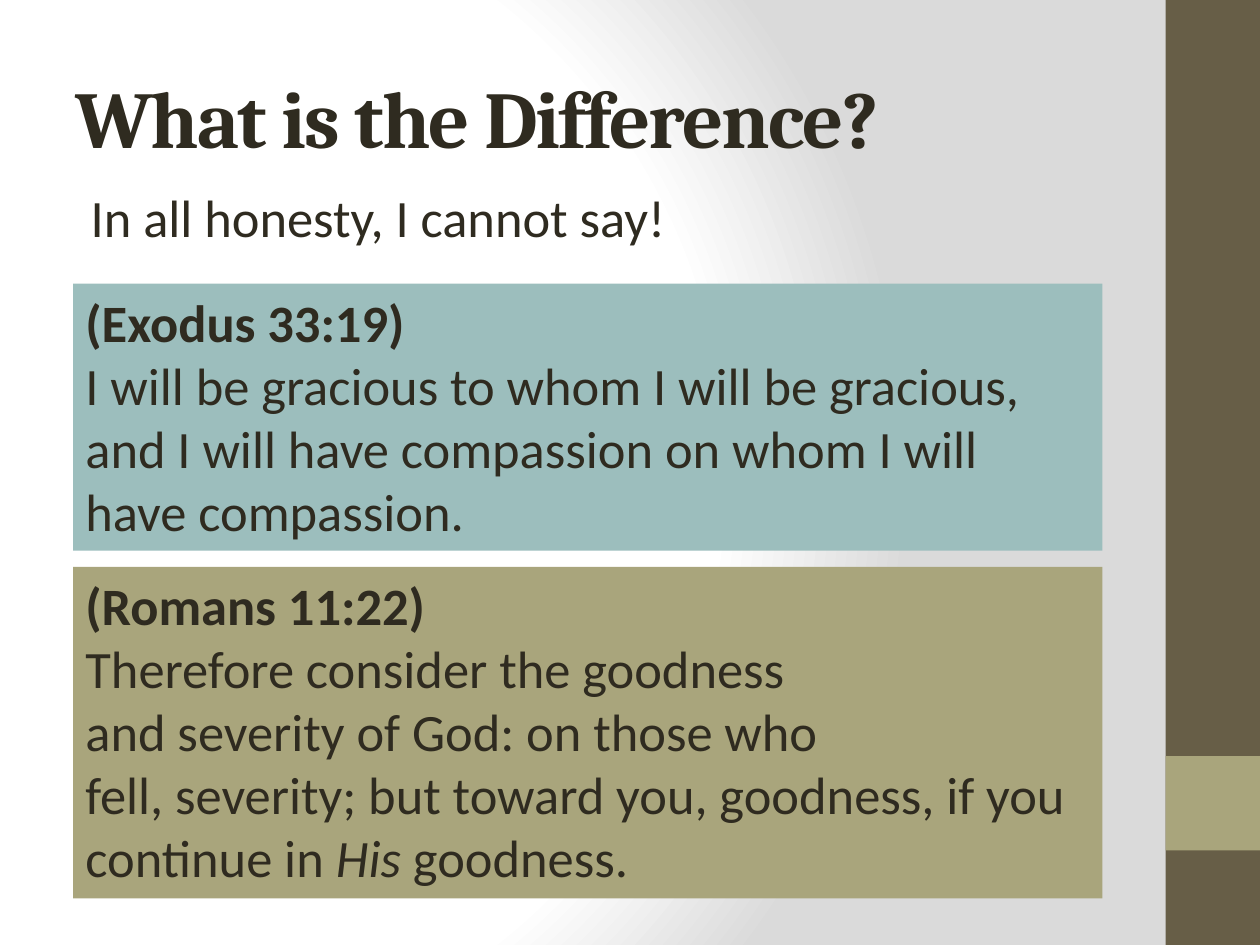
from lxml import etree
from pptx import Presentation
from pptx.dml.color import RGBColor
from pptx.enum.shapes import MSO_SHAPE
from pptx.enum.text import MSO_ANCHOR, MSO_AUTO_SIZE, PP_ALIGN
from pptx.oxml.ns import qn
from pptx.util import Inches, Pt

RECT = MSO_SHAPE.RECTANGLE
TOP, MIDDLE = MSO_ANCHOR.TOP, MSO_ANCHOR.MIDDLE
LEFT = PP_ALIGN.LEFT
NO_FIT = MSO_AUTO_SIZE.NONE
TITLE_ONLY = 5
NB = chr(160)  # no-break space

COLORS = {
    "ink": "2F2B20",
    "bar": "675E47",
    "olive": "A9A57C",
    "teal": "9CBEBD",
    "white": "FFFFFF",
    "gray": "DADADA",
}


def color(name):
    return RGBColor.from_string(COLORS[name])


def write(shape, paras, size=30, font="Calibri", anchor=TOP, spacing=None):
    """Fill a shape with paragraphs, each a list of (text, style) runs."""
    frame = shape.text_frame
    frame.word_wrap = True
    frame.auto_size = NO_FIT
    frame.vertical_anchor = anchor
    for i, runs in enumerate(paras):
        para = frame.add_paragraph() if i else frame.paragraphs[0]
        para.alignment = LEFT
        for text, style in runs:
            run = para.add_run()
            run.text = text
            run.font.name = font
            run.font.size = Pt(size)
            run.font.bold = style == "bold"
            run.font.italic = style == "italic"
            run.font.color.rgb = color("ink")
            if spacing is not None:
                run.font._element.set("spc", str(spacing))


def add_rect(slide, box, fill):
    rect = slide.shapes.add_shape(RECT, *map(Inches, box))
    rect.shadow.inherit = False
    rect.fill.solid()
    rect.fill.fore_color.rgb = color(fill)
    rect.line.fill.background()
    return rect


def add_back(slide):
    """Set a round gradient that fades to gray on the right."""
    slide.background.fill.gradient()
    grad = next(slide.element.iter(qn("a:gradFill")))
    for child in list(grad):
        grad.remove(child)
    stops = etree.SubElement(grad, qn("a:gsLst"))
    for pos, name in ((0, "white"), (75, "white"), (100, "gray")):
        stop = etree.SubElement(stops, qn("a:gs"), pos=str(pos * 1000))
        etree.SubElement(stop, qn("a:srgbClr"), val=COLORS[name])
    round_path = etree.SubElement(grad, qn("a:path"), path="circle")
    etree.SubElement(round_path, qn("a:fillToRect"),
                     l="20000", t="50000", r="100000", b="50000")


def add_side(slide, box):
    """Draw the side bar with its square accent."""
    left, top, width, height = box
    add_rect(slide, box, "bar")
    add_rect(slide, (left, top + height - 2 * width, width, width), "olive")


def add_title(slide, box, text):
    title = slide.shapes.title
    title.left, title.top, title.width, title.height = map(Inches, box)
    write(title, [[(text, "bold")]], size=46, font="Cambria",
          anchor=MIDDLE, spacing=-100)


def add_lead(slide, box, text):
    lead = slide.shapes.add_textbox(*map(Inches, box))
    lead.text_frame.margin_left = Inches(0.22)
    write(lead, [[(text, "plain")]])


def add_verse(slide, box, fill, source, runs):
    write(add_rect(slide, box, fill), [[(source, "bold")], runs])


def main():
    deck = Presentation()
    deck.slide_width, deck.slide_height = Inches(10), Inches(7.5)
    slide = deck.slides.add_slide(deck.slide_layouts[TITLE_ONLY])
    add_back(slide)
    add_side(slide, (9.25, 0, 0.75, 7.5))
    add_title(slide, (0.5, 0.3, 8.33, 1.25), "What is the Difference?")
    add_lead(slide, (0.5, 1.42, 8.33, 0.75), "In all honesty, I cannot say!")
    add_verse(slide, (0.58, 2.25, 8.17, 2.12), "teal", "(Exodus 33:19)", [
        (f"I will be gracious to whom I will be{NB}gracious, and I will have "
         "compassion on whom I will have compassion.", "plain"),
    ])
    add_verse(slide, (0.58, 4.5, 8.17, 2.63), "olive", "(Romans 11:22)", [
        (f"Therefore consider the goodness and{NB}severity{NB}of God: on those "
         f"who fell,{NB}severity; but toward you, goodness, if you "
         f"continue in{NB}", "plain"),
        ("His", "italic"),
        (f"{NB}goodness.", "plain"),
    ])
    deck.save("out.pptx")


if __name__ == "__main__":
    main()
